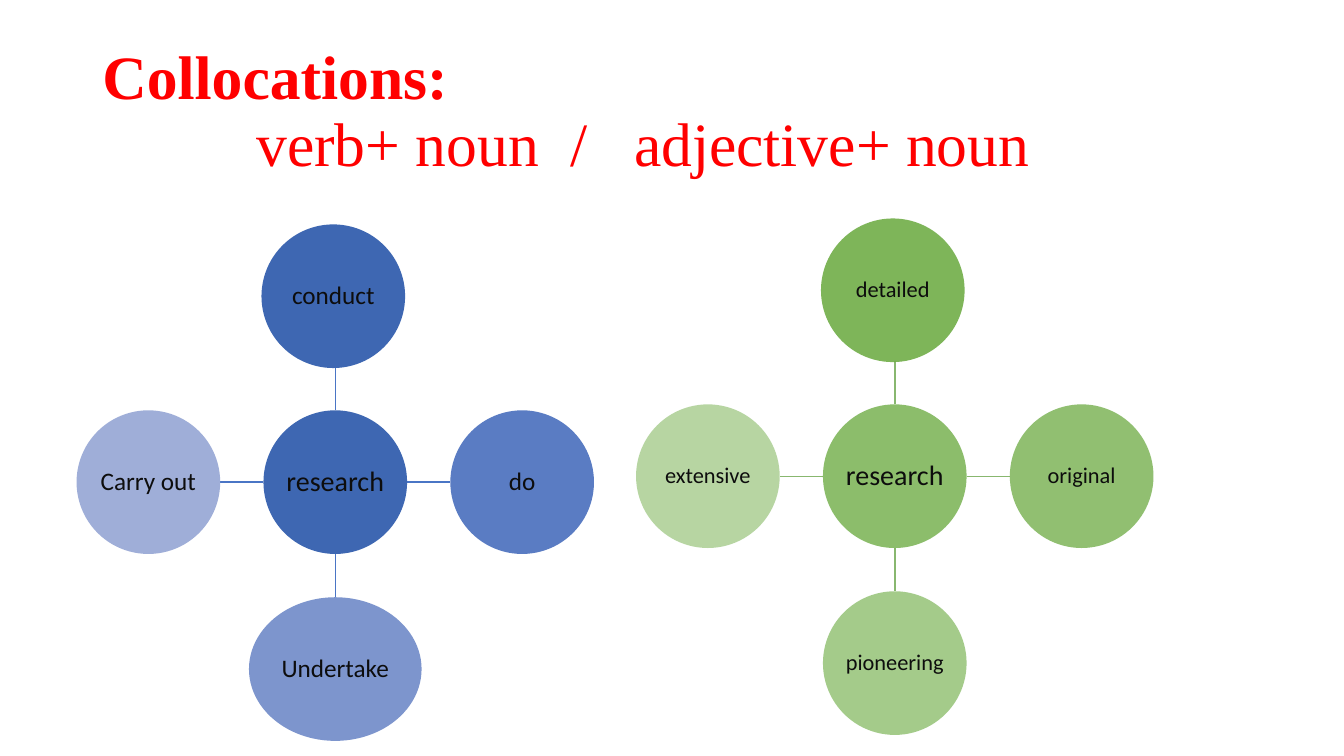
from collections import namedtuple
from dataclasses import dataclass

from lxml.etree import SubElement
from pptx import Presentation
from pptx.dml.color import RGBColor
from pptx.enum.shapes import MSO_CONNECTOR, MSO_SHAPE
from pptx.enum.text import MSO_ANCHOR, PP_ALIGN
from pptx.oxml.ns import qn
from pptx.util import Cm, Pt


@dataclass(frozen=True)
class Theme:
    title_font: str = "Times New Roman"
    body_font: str = "Calibri"
    title_size: int = 44
    hub_size: int = 20
    verb_size: int = 18
    adjective_size: int = 16
    title: str = "FF0000"
    text: str = "0D0D0D"
    blue_line: str = "4A75C5"
    green_line: str = "88B76F"
    green: str = "70AD47"


THEME = Theme()
Box = namedtuple("Box", "left top width height")
Fill = namedtuple("Fill", "color opacity", defaults=(100,))
Node = namedtuple("Node", "word fill direction width", defaults=(3.62,))

DIAMETER = 3.62
UP, RIGHT, DOWN, LEFT = (0, -1), (1, 0), (0, 1), (-1, 0)


def style_paragraph(p, font, size, color):
    p.font.name = font
    p.font.size = Pt(size)
    p.font.color.rgb = RGBColor.from_string(color)
    p.line_spacing = 0.9


def add_tab_stops(p, stops):
    tabs = SubElement(p._p.get_or_add_pPr(), qn("a:tabLst"))
    for stop in stops:
        SubElement(tabs, qn("a:tab"), pos=str(Cm(stop)), algn="l")


def add_title(s, box):
    tf = s.shapes.add_textbox(*map(Cm, box)).text_frame
    tf.word_wrap = True
    tf.vertical_anchor = MSO_ANCHOR.MIDDLE
    heading = tf.paragraphs[0]
    heading.text = "Collocations:"
    patterns = tf.add_paragraph()
    patterns.text = "\tverb+ noun\t/\tadjective+ noun"
    for p in (heading, patterns):
        style_paragraph(p, THEME.title_font, THEME.title_size, THEME.title)
    heading.font.bold = True
    add_tab_stops(patterns, (3.88, 11.8, 13.4))


def add_circle(s, x, y, width, word, fill, size):
    """Draw a labelled ellipse centred on x, y."""
    sp = s.shapes.add_shape(MSO_SHAPE.OVAL, Cm(x - width / 2),
                            Cm(y - DIAMETER / 2), Cm(width), Cm(DIAMETER))
    sp.shadow.inherit = False
    sp.line.fill.background()
    sp.fill.solid()
    sp.fill.fore_color.rgb = RGBColor.from_string(fill.color)
    if fill.opacity < 100:
        color = sp.fill._xPr.find(qn("a:solidFill"))[0]
        SubElement(color, qn("a:alpha"), val=str(fill.opacity * 1000))
    tf = sp.text_frame
    tf.word_wrap = True
    tf.vertical_anchor = MSO_ANCHOR.MIDDLE
    tf.margin_left = tf.margin_right = tf.margin_top = tf.margin_bottom = 0
    p = tf.paragraphs[0]
    p.text = word
    p.alignment = PP_ALIGN.CENTER
    style_paragraph(p, THEME.body_font, size, THEME.text)


def add_spoke(s, start, end, color):
    line = s.shapes.add_connector(MSO_CONNECTOR.STRAIGHT,
                                  *map(Cm, (*start, *end)))
    line.line.color.rgb = RGBColor.from_string(color)
    line.line.width = Pt(1)
    SubElement(line._element.spPr, qn("a:effectLst"))


def add_word_wheel(s, box, hub_fill, line_color, size, nodes):
    """Draw the hub "research" with one word on each side of it."""
    x, y = box.left + box.width / 2, box.top + box.height / 2
    radius = DIAMETER / 2
    reach = (box.width - DIAMETER) / 2
    for node in nodes:
        dx, dy = node.direction
        add_spoke(s, (x + dx * radius, y + dy * radius),
                  (x + dx * (reach - radius), y + dy * (reach - radius)),
                  line_color)
        nudge = -0.05 if node.direction == UP else 0
        add_circle(s, x + dx * reach + nudge, y + dy * reach - nudge / 2,
                   node.width, node.word, node.fill, size)
    add_circle(s, x, y, DIAMETER, "research", hub_fill, THEME.hub_size)


def main():
    prs = Presentation()
    prs.slide_width, prs.slide_height = Cm(33.87), Cm(19.05)
    s = prs.slides.add_slide(prs.slide_layouts[6])

    add_title(s, Box(2.33, 1.01, 29.21, 3.68))
    add_word_wheel(
        s, Box(1.93, 5.63, 13.04, 13.04), Fill("3E67B2"),
        THEME.blue_line, THEME.verb_size, [
            Node("conduct", Fill("3E67B2"), UP),
            Node("do", Fill("5A7CC3"), RIGHT),
            Node("Undertake", Fill("7D95CD"), DOWN, 4.35),
            Node("Carry out", Fill("9FAED8"), LEFT),
        ])
    add_word_wheel(
        s, Box(16.03, 5.48, 13.04, 13.04), Fill(THEME.green, 80),
        THEME.green_line, THEME.adjective_size, [
            Node("detailed", Fill(THEME.green, 90), UP),
            Node("original", Fill(THEME.green, 77), RIGHT),
            Node("pioneering", Fill(THEME.green, 63), DOWN),
            Node("extensive", Fill(THEME.green, 50), LEFT),
        ])
    prs.save("out.pptx")


if __name__ == "__main__":
    main()
